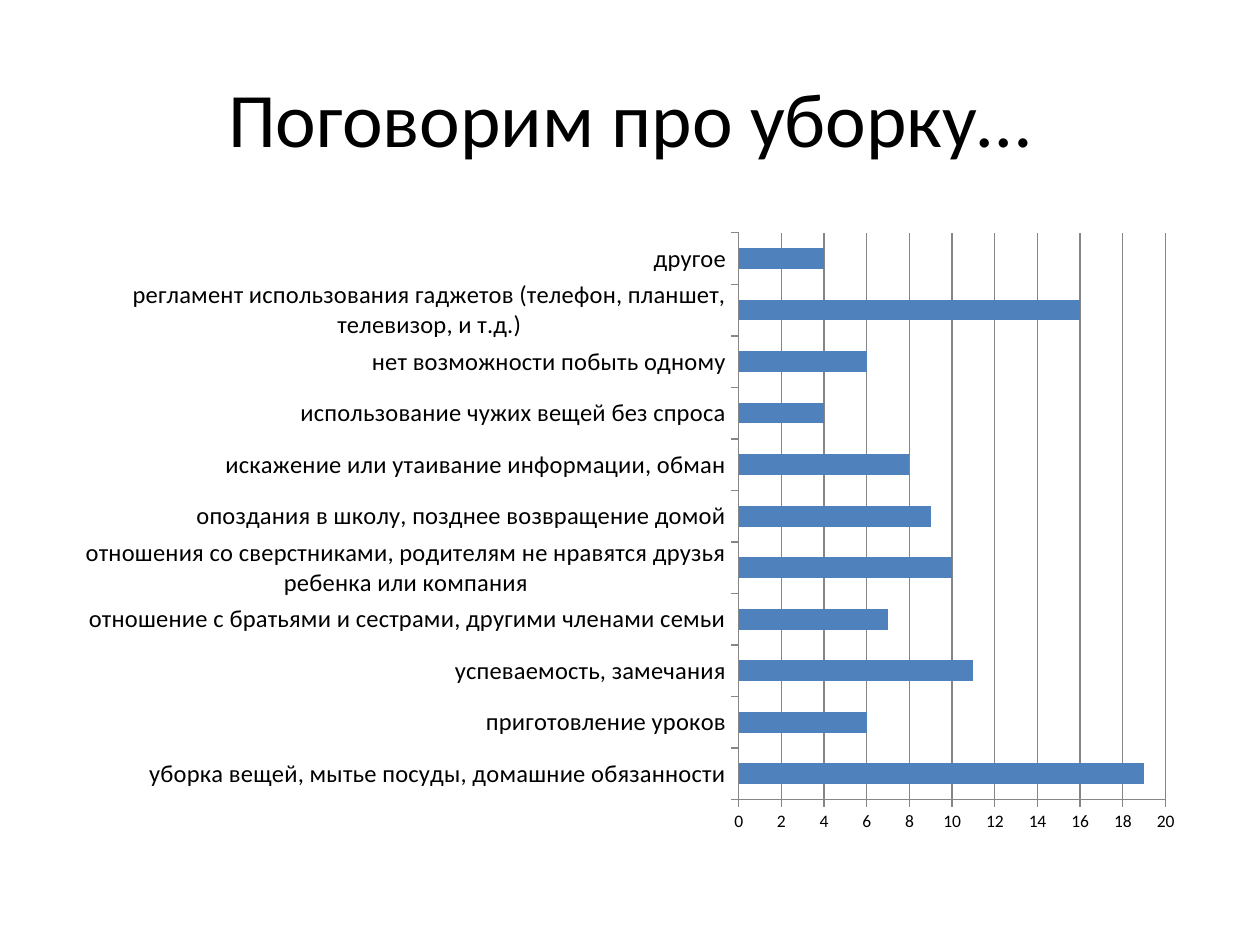
from dataclasses import dataclass

from pptx import Presentation
from pptx.chart.data import CategoryChartData
from pptx.dml.color import RGBColor
from pptx.enum.chart import XL_CHART_TYPE as ChartType, XL_TICK_MARK as TickMark
from pptx.enum.text import MSO_ANCHOR as Anchor, PP_ALIGN as Align
from pptx.util import Pt


@dataclass(frozen=True)
class Theme:
    font: str = "Calibri"
    ink: RGBColor = RGBColor(0x00, 0x00, 0x00)
    bar: RGBColor = RGBColor(0x4F, 0x81, 0xBD)
    line: RGBColor = RGBColor(0x86, 0x86, 0x86)
    title_size: Pt = Pt(44)
    reason_size: Pt = Pt(14)
    scale_size: Pt = Pt(10)


theme = Theme()

reasons = [
    ("уборка вещей, мытье посуды, домашние обязанности", 19),
    ("приготовление уроков", 6),
    (" успеваемость, замечания", 11),
    ("отношение с братьями и сестрами, другими членами семьи", 7),
    ("отношения со сверстниками, родителям не нравятся друзья ребенка или компания", 10),
    ("опоздания в школу, позднее возвращение домой", 9),
    (" искажение или утаивание информации, обман", 8),
    ("использование чужих вещей без спроса", 4),
    ("нет возможности побыть одному", 6),
    ("регламент использования гаджетов (телефон, планшет, телевизор, и т.д.)", 16),
    (" другое", 4),
]


def style_font(font, size):
    font.name = theme.font
    font.size = size
    font.bold = False
    font.color.rgb = theme.ink


deck = Presentation()
deck.slide_width, deck.slide_height = Pt(720), Pt(540)
slide = deck.slides.add_slide(deck.slide_layouts[5])

title = slide.shapes.title
title.left, title.top, title.width, title.height = Pt(36), Pt(21.6), Pt(648), Pt(90)
title.text_frame.text = "Поговорим про уборку…"
title.text_frame.vertical_anchor = Anchor.MIDDLE
heading = title.text_frame.paragraphs[0]
heading.alignment = Align.CENTER
style_font(heading.font, theme.title_size)

answers = CategoryChartData()
answers.categories = [reason for reason, votes in reasons]
answers.add_series("Series 1", [votes for reason, votes in reasons])

survey = slide.shapes.add_chart(
    ChartType.BAR_CLUSTERED, Pt(36), Pt(126), Pt(648), Pt(356.4), answers
).chart
survey.has_title = False
survey.has_legend = False
style_font(survey.font, theme.scale_size)

bars = survey.plots[0]
bars.gap_width = 150
bars.vary_by_categories = False
bars.series[0].format.fill.solid()
bars.series[0].format.fill.fore_color.rgb = theme.bar

reason_axis, vote_axis = survey.category_axis, survey.value_axis
for axis, size in ((reason_axis, theme.reason_size), (vote_axis, theme.scale_size)):
    axis.major_tick_mark = TickMark.OUTSIDE
    axis.minor_tick_mark = TickMark.NONE
    axis.format.line.color.rgb = theme.line
    axis.format.line.width = Pt(0.75)
    style_font(axis.tick_labels.font, size)

reason_axis.has_major_gridlines = False
vote_axis.minimum_scale, vote_axis.maximum_scale = 0, 20
vote_axis.major_unit = 2
vote_axis.has_major_gridlines = True
vote_axis.major_gridlines.format.line.color.rgb = theme.line
vote_axis.major_gridlines.format.line.width = Pt(0.75)

deck.save("out.pptx")
